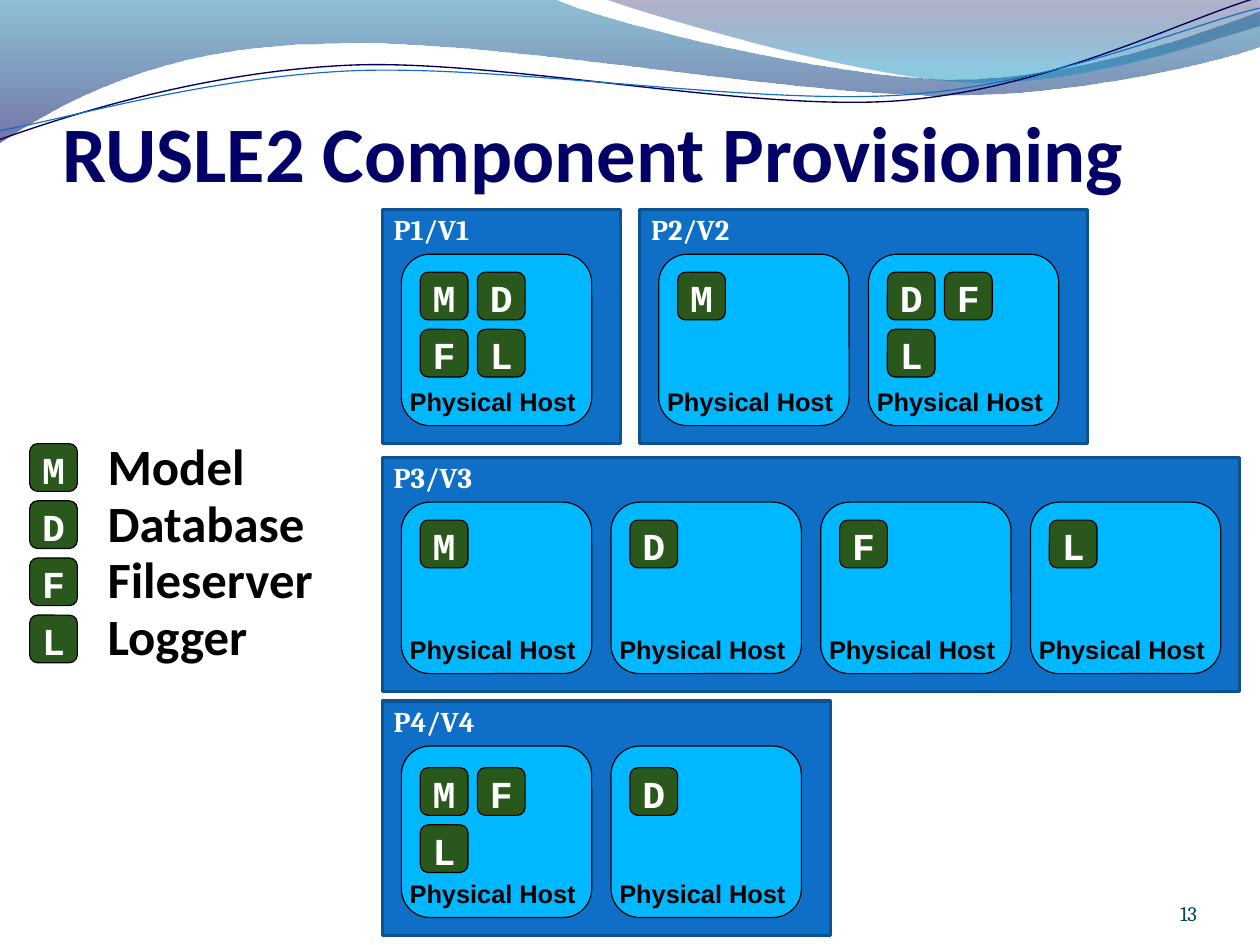
from dataclasses import dataclass

from lxml import etree
from pptx import Presentation
from pptx.dml.color import RGBColor
from pptx.enum.shapes import MSO_SHAPE as Kind
from pptx.enum.text import MSO_ANCHOR as Anchor, MSO_AUTO_SIZE as Fit, PP_ALIGN as Align
from pptx.oxml.ns import qn
from pptx.util import Cm, Pt

TITLE = "RUSLE2 Component Provisioning"
PAGE = "13"
HOST = "Physical Host"
PARTS = ["Model", "Database", "Fileserver", "Logger"]

# name, left, top, width, chip inset, chips of each host
RACKS = [
    ("P1/V1", 8.5, 4.65, 5.29, 0.4, ["MDFL"]),
    ("P3/V3", 8.5, 10.16, 19.05, 0.4, ["M", "D", "F", "L"]),
    ("P2/V2", 14.22, 4.65, 9.95, 0.4, ["M", "DFL"]),
    ("P4/V4", 8.5, 15.58, 9.95, 0.48, ["MFL", "D"]),
]

BANDS = [
    ([(0, "0074A1", 45), (1, "00005D", 55)], (0, 0), [
        [(12.32, -0.03)],
        [(13.31, 0.46), (18.59, 1.75), (21.23, 1.75)],
        [(23.9, 1.75), (26.82, 0.71), (27.99, 0.25)],
        [(28.04, 1.02)],
        [(27.53, 1.22), (24.36, 2.13), (20.88, 2.11)],
        [(17.42, 2.11), (10.69, 0.79), (7.21, 0.97)],
        [(3.61, 0.99), (1.3, 2.31), (-0.03, 3.18)],
    ]),
    ([(0, "00004B", 30), (0.8, "008BBF", 45)], (13.41, -0.03), [
        [(14.27, 0.3), (19.1, 1.73), (21.51, 1.83)],
        [(23.95, 1.93), (26.92, 0.89), (27.99, 0.58)],
        [(27.99, 0)],
    ]),
]
WAVES = [
    ("00005A", 0.85, (0, 3.1), [
        [(1.35, 2.62), (4.42, 1.6), (7.75, 1.45)],
        [(11.07, 1.3), (16.59, 2.49), (19.96, 2.24)],
        [(23.32, 1.98), (26.29, 0.43), (27.94, -0.05)],
    ]),
    ("0F6FC6", 0.75, (0, 2.9), [
        [(1.32, 2.69), (4.57, 1.7), (7.92, 1.57)],
        [(11.28, 1.45), (16.74, 2.34), (20.07, 2.11)],
        [(23.42, 1.88), (26.34, 0.58), (27.99, 0.18)],
    ]),
]


@dataclass(frozen=True)
class Theme:
    rack: tuple = ("0F6FC6", "0B5292", 2)
    host: tuple = ("00B8FF", "000000", 0.75)
    chip: tuple = ("2A581C", "000000", 0.75)
    title: tuple = ("Calibri", 49.5, "000066", True)
    page: tuple = ("Cambria", 13, "024558", False)
    name: tuple = ("Cambria", 18, "FFFFFF", True)
    label: tuple = ("Arial", 16, "000000", True)
    mark: tuple = ("Courier New", 24, "FFFFFF", True)
    key: tuple = ("Calibri", 32, "000000", True)


LOOK = Theme()
TIGHT = 0.93
CHIP, STEP = 1.06, 1.27
HOST_W, HOST_H, HOST_GAP = 4.23, 3.81, 4.66
RACK_H = 5.21


def color(code):
    return RGBColor.from_string(code)


def write(shape, text, font, align=Align.LEFT, anchor=Anchor.TOP,
          pad=(0, 0, 0, 0), wrap=False, lead=None):
    frame = shape.text_frame
    frame.text = text
    frame.word_wrap = wrap
    frame.auto_size = Fit.NONE
    frame.vertical_anchor = anchor
    (frame.margin_left, frame.margin_top,
     frame.margin_right, frame.margin_bottom) = map(Cm, pad)
    face, size, ink, bold = font
    for par in frame.paragraphs:
        par.alignment = align
        if lead:
            par.line_spacing = lead
        for run in par.runs:
            run.font.name, run.font.size, run.font.bold = face, Pt(size), bold
            run.font.color.rgb = color(ink)


def block(shapes, kind, box, paint):
    shape = shapes.add_shape(kind, *map(Cm, box))
    fill, edge, width = paint
    shape.shadow.inherit = False
    shape.fill.solid()
    shape.fill.fore_color.rgb = color(fill)
    shape.line.color.rgb = color(edge)
    shape.line.width = Pt(width)
    return shape


def outline(shapes, start, legs, close):
    pen = shapes.build_freeform(*map(Cm, start))
    spots = [(Cm(x), Cm(y)) for leg in legs for x, y in leg]
    pen.add_line_segments(spots, close=close)
    shape = pen.convert_to_shape()
    shape.shadow.inherit = False
    steps = iter(list(shape.element.iter(qn("a:lnTo"))))
    for leg in legs:
        first, *rest = [next(steps) for _ in leg]
        if rest:
            curve = etree.Element(qn("a:cubicBezTo"))
            first.addprevious(curve)
            for step in (first, *rest):
                curve.append(step[0])
                step.getparent().remove(step)
    return shape


def band(shapes, stops, start, legs):
    shape = outline(shapes, start, legs, True)
    shape.line.fill.background()
    shape.fill.gradient()
    shape.fill.gradient_angle = 270
    for stop, (place, ink, _) in zip(shape.fill.gradient_stops, stops):
        stop.position = place
        stop.color.rgb = color(ink)
    tints = shape.element.spPr.iter(qn("a:srgbClr"))
    for tint, (_, _, alpha) in zip(list(tints), stops):
        etree.SubElement(tint, qn("a:alpha"), val=str(alpha * 1000))


def wave(shapes, ink, width, start, legs):
    shape = outline(shapes, start, legs, False)
    shape.fill.background()
    shape.line.color.rgb = color(ink)
    shape.line.width = Pt(width)


def chip(shapes, mark, x, y):
    shape = block(shapes, Kind.ROUNDED_RECTANGLE, (x, y, CHIP, CHIP), LOOK.chip)
    write(shape, mark, LOOK.mark, Align.CENTER)


def rack(shapes, name, x, y, width, inset, hosts):
    shape = block(shapes, Kind.RECTANGLE, (x, y, width, RACK_H), LOOK.rack)
    write(shape, name, LOOK.name, pad=(0.25, 0.13, 0.25, 0.13), wrap=True, lead=TIGHT)
    for i, marks in enumerate(hosts):
        left, top = x + 0.42 + i * HOST_GAP, y + 1
        host = block(shapes, Kind.ROUNDED_RECTANGLE, (left, top, HOST_W, HOST_H), LOOK.host)
        write(host, HOST, LOOK.label, anchor=Anchor.BOTTOM, lead=TIGHT)
        for j, mark in enumerate(marks):
            row, col = divmod(j, 2)
            chip(shapes, mark, left + 0.42 + col * STEP, top + inset + row * STEP)


def main():
    deck = Presentation()
    deck.slide_width, deck.slide_height = Cm(28), Cm(21)
    slide = deck.slides.add_slide(deck.slide_layouts[5])
    shapes = slide.shapes

    for item in BANDS:
        band(shapes, *item)
    for item in WAVES:
        wave(shapes, *item)

    title = shapes.title
    title.left, title.top, title.width, title.height = map(Cm, (1.4, 2.15, 25.2, 3.5))
    write(title, TITLE, LOOK.title, pad=(0, 0.15, 0, 0), wrap=True)

    page = shapes.add_textbox(*map(Cm, (24.26, 19.46, 2.34, 1.12)))
    write(page, PAGE, LOOK.page, Align.RIGHT, Anchor.BOTTOM, wrap=True)

    for item in RACKS:
        rack(shapes, *item)

    for i, part in enumerate(PARTS):
        chip(shapes, part[0], 0.66, 9.86 + i * STEP)
    key = shapes.add_textbox(*map(Cm, (2.14, 9.65, 5.13, 5.33)))
    write(key, "\n".join(PARTS), LOOK.key, pad=(0.25, 0.13, 0.25, 0.13), lead=TIGHT)

    deck.save("out.pptx")


if __name__ == "__main__":
    main()
